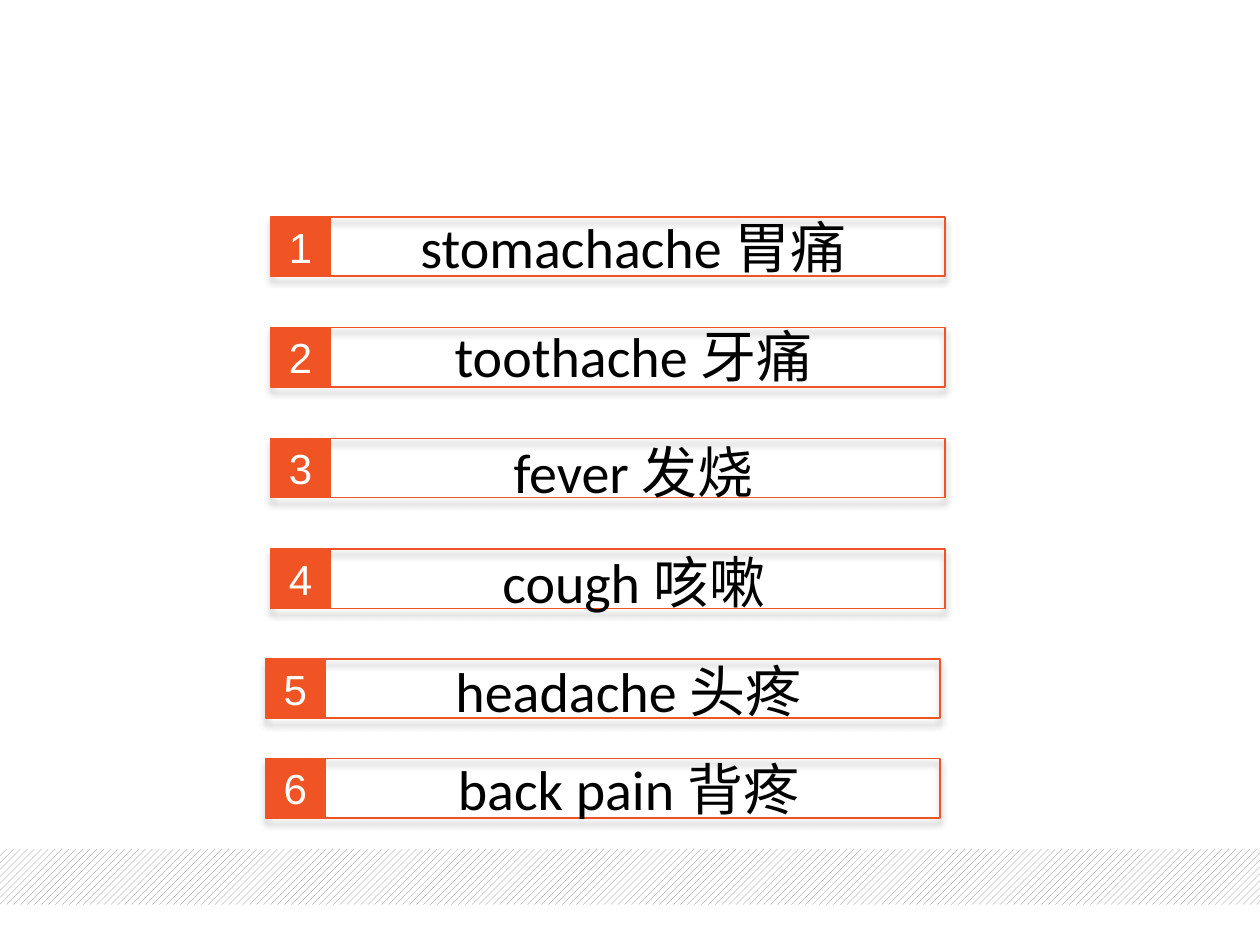
from lxml import etree
from pptx import Presentation
from pptx import util as u
from pptx.dml.color import RGBColor
from pptx.enum import dml, shapes, text
from pptx.oxml import parse_xml
from pptx.oxml.ns import nsdecls, qn

SHADOW = (
    f'<a:outerShdw {nsdecls("a")} blurRad="{u.Pt(4)}" dist="{u.Pt(3)}" '
    'dir="5400000" algn="t" rotWithShape="0">'
    '<a:srgbClr val="000000"><a:alpha val="40000"/></a:srgbClr></a:outerShdw>'
)


def color(code):
    return RGBColor.from_string(code)


def write(para, words, font="Calibri", size=32, tint="000000"):
    """Add a run in one font, used for Latin and East Asian letters alike."""
    run = para.add_run()
    run.text = words
    run.font.size = u.Pt(size)
    run.font.color.rgb = color(tint)
    run.font.name = font
    east = etree.SubElement(run.font._element, qn("a:ea"))
    east.set("typeface", font)
    para.alignment = text.PP_ALIGN.CENTER


class Page:
    accent = "F05425"
    side = 0.47
    width = 5.35

    def __init__(self, slide):
        self.slide = slide

    def rect(self, home, left, top, width, height):
        box = home.shapes.add_shape(
            shapes.MSO_SHAPE.RECTANGLE,
            u.Inches(left), u.Inches(top), u.Inches(width), u.Inches(height))
        box.shadow.inherit = False
        return box

    def band(self, top, height):
        box = self.rect(self.slide, 0, top, 10, height)
        box.fill.patterned()
        box.fill.pattern = dml.MSO_PATTERN.WIDE_UPWARD_DIAGONAL
        box.fill.fore_color.rgb = color("808080")
        box.fill.back_color.rgb = color("FFFFFF")
        box.line.fill.background()

    def edge(self, box):
        box.line.color.rgb = color(self.accent)
        box.line.width = u.Pt(1)

    def frame(self, home, left, top):
        box = self.rect(home, left, top, self.width, self.side)
        box.fill.background()
        self.edge(box)
        box._element.spPr.find(qn("a:effectLst")).append(parse_xml(SHADOW))

    def badge(self, home, left, top, num):
        box = self.rect(home, left, top, self.side, self.side)
        box.fill.solid()
        box.fill.fore_color.rgb = color(self.accent)
        self.edge(box)
        body = box.text_frame
        body.vertical_anchor = text.MSO_ANCHOR.MIDDLE
        write(body.paragraphs[0], str(num), font="Arial", size=24, tint="FFFFFF")

    def label(self, home, left, top, word, gloss):
        box = home.shapes.add_textbox(
            u.Inches(left), u.Inches(top), u.Inches(4.46), u.Inches(0.64))
        body = box.text_frame
        body.word_wrap = True
        body.auto_size = text.MSO_AUTO_SIZE.SHAPE_TO_FIT_TEXT
        para = body.paragraphs[0]
        write(para, word + " ")
        write(para, gloss, font="Noto Sans CJK SC")

    def entry(self, num, left, top, rise, word, gloss):
        group = self.slide.shapes.add_group_shape()
        self.frame(group, left, top)
        self.badge(group, left, top, num)
        self.label(group, left + 0.65, top - rise, word, gloss)


def main():
    deck = Presentation()
    deck.slide_width, deck.slide_height = u.Inches(10), u.Inches(7.5)
    page = Page(deck.slides.add_slide(deck.slide_layouts[6]))

    # Hatched footer band
    page.band(6.74, 0.44)

    # Numbered words: left, top, rise of the label above the frame
    rows = [
        (2.15, 1.72, 0.08, "stomachache", "胃痛"),
        (2.15, 2.6, 0.1, "toothache", "牙痛"),
        (2.15, 3.48, 0.06, "fever", "发烧"),
        (2.15, 4.36, 0.06, "cough", "咳嗽"),
        (2.11, 5.23, 0.07, "headache", "头疼"),
        (2.11, 6.02, 0.08, "back pain", "背疼"),
    ]
    for num, row in enumerate(rows, 1):
        page.entry(num, *row)

    deck.save("out.pptx")


if __name__ == "__main__":
    main()
